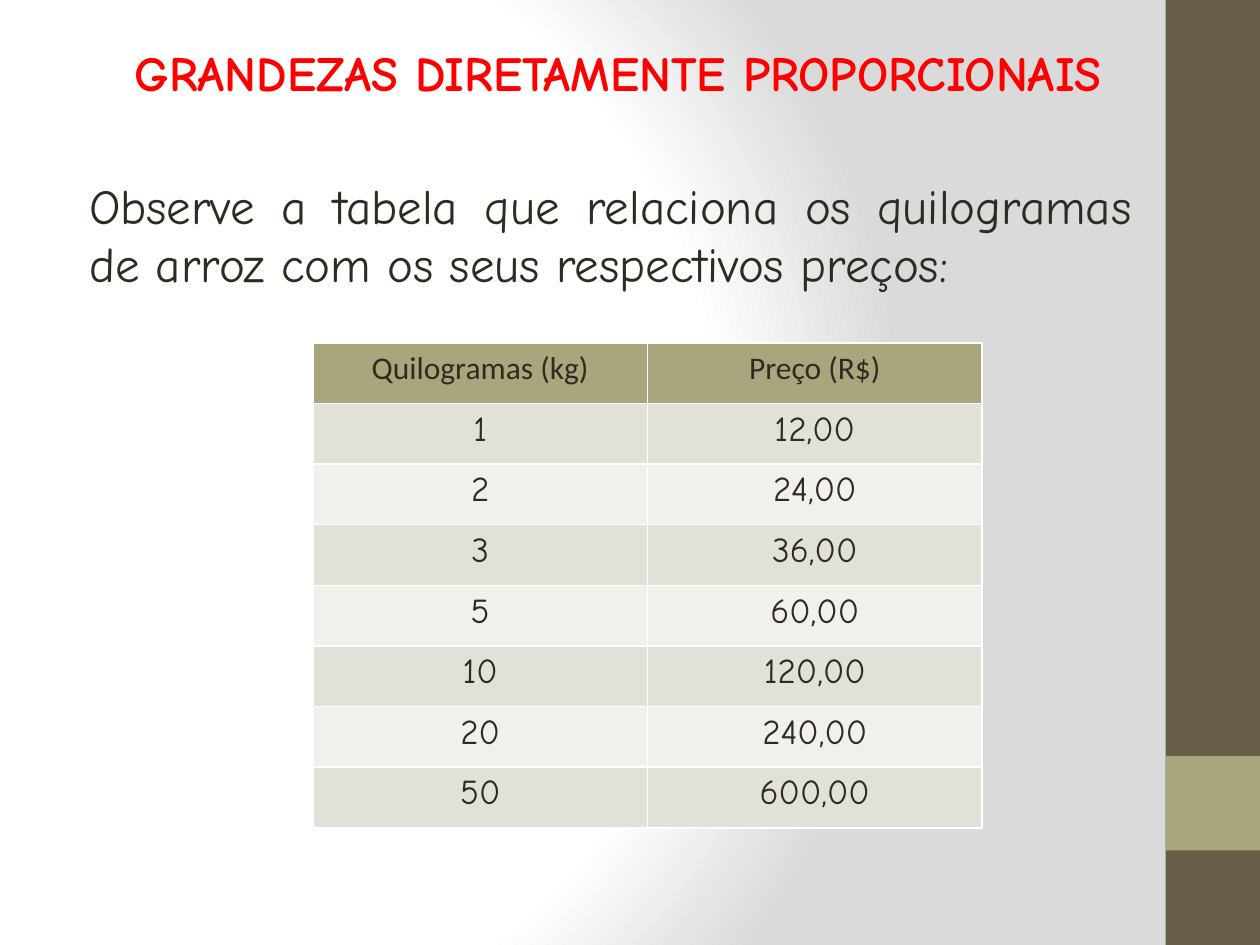
from pptx import Presentation
from pptx.dml.color import RGBColor
from pptx.enum.shapes import MSO_SHAPE
from pptx.enum.text import MSO_ANCHOR, MSO_AUTO_SIZE, PP_ALIGN
from pptx.oxml import parse_xml
from pptx.oxml.ns import nsdecls
from pptx.util import Pt

TITLE = "GRANDEZAS DIRETAMENTE PROPORCIONAIS"
INTRODUCTION = ("Observe a tabela que relaciona os quilogramas de arroz "
                "com os seus respectivos preços:")
ROWS = [
    ("Quilogramas (kg)", "Preço (R$)"),
    ("1", "12,00"),
    ("2", "24,00"),
    ("3", "36,00"),
    ("5", "60,00"),
    ("10", "120,00"),
    ("20", "240,00"),
    ("50", "600,00"),
]

RED = RGBColor(0xFF, 0x00, 0x00)
INK = RGBColor(0x2F, 0x2B, 0x20)
BROWN = RGBColor(0x67, 0x5E, 0x47)
OLIVE = RGBColor(0xA9, 0xA5, 0x7C)
BANDS = [RGBColor(0xF1, 0xF0, 0xEC), RGBColor(0xE2, 0xE1, 0xD7)]
HAND_FONT = "Comic Neue"
HEADER_FONT = "Calibri"

SIDEBARS = [  # top, height, colour
    (0, 540, BROWN),
    (432, 54, OLIVE),
]
SIDEBAR_LEFT, SIDEBAR_WIDTH = 666, 54
COLUMN_WIDTH, ROW_HEIGHT = 191.2, 34.65

BACKGROUND = f"""
<p:bg {nsdecls("p", "a")}><p:bgPr>
  <a:gradFill rotWithShape="1">
    <a:gsLst>
      <a:gs pos="0"><a:srgbClr val="FFFFFF"/></a:gs>
      <a:gs pos="75000"><a:srgbClr val="FFFFFF"/></a:gs>
      <a:gs pos="100000"><a:srgbClr val="DADADA"/></a:gs>
    </a:gsLst>
    <a:path path="circle">
      <a:fillToRect l="20000" t="50000" r="100000" b="50000"/>
    </a:path>
  </a:gradFill>
  <a:effectLst/>
</p:bgPr></p:bg>"""


def place(shape, left, top, width, height):
    shape.left, shape.top = Pt(left), Pt(top)
    shape.width, shape.height = Pt(width), Pt(height)


def write(frame, text, alignment, font_name, size, color, bold=False):
    frame.text = text
    paragraph = frame.paragraphs[0]
    paragraph.alignment = alignment
    font = paragraph.font
    font.name, font.size, font.bold = font_name, Pt(size), bold
    font.color.rgb = color


def prepare(frame):
    frame.word_wrap = True
    frame.auto_size = MSO_AUTO_SIZE.NONE
    frame.vertical_anchor = MSO_ANCHOR.TOP


presentation = Presentation()
presentation.slide_width, presentation.slide_height = Pt(720), Pt(540)
slide = presentation.slides.add_slide(presentation.slide_layouts[5])
slide.element.cSld.insert(0, parse_xml(BACKGROUND))

for top, height, color in SIDEBARS:
    sidebar = slide.shapes.add_shape(
        MSO_SHAPE.RECTANGLE, Pt(SIDEBAR_LEFT), Pt(top), Pt(SIDEBAR_WIDTH), Pt(height))
    sidebar.shadow.inherit = False
    sidebar.fill.solid()
    sidebar.fill.fore_color.rgb = color
    sidebar.line.fill.background()

title = slide.shapes.title
place(title, 67.7, 20.9, 571, 74.9)
prepare(title.text_frame)
write(title.text_frame, TITLE, PP_ALIGN.CENTER, HAND_FONT, 28, RED, bold=True)

introduction = slide.shapes.add_textbox(Pt(43.9), Pt(96.5), Pt(609.8), Pt(108.7))
prepare(introduction.text_frame)
write(introduction.text_frame, INTRODUCTION, PP_ALIGN.JUSTIFY, HAND_FONT, 28, INK)

table = slide.shapes.add_table(
    len(ROWS), 2, Pt(178.8), Pt(195.9),
    Pt(2 * COLUMN_WIDTH), Pt(len(ROWS) * ROW_HEIGHT)).table
for column in table.columns:
    column.width = Pt(COLUMN_WIDTH)
for row_number, values in enumerate(ROWS):
    table.rows[row_number].height = Pt(ROW_HEIGHT)
    is_header = row_number == 0
    font_name, size = (HEADER_FONT, 18) if is_header else (HAND_FONT, 20)
    for column_number, value in enumerate(values):
        cell = table.cell(row_number, column_number)
        cell.fill.solid()
        cell.fill.fore_color.rgb = OLIVE if is_header else BANDS[row_number % 2]
        write(cell.text_frame, value, PP_ALIGN.CENTER, font_name, size, INK)

presentation.save("out.pptx")
